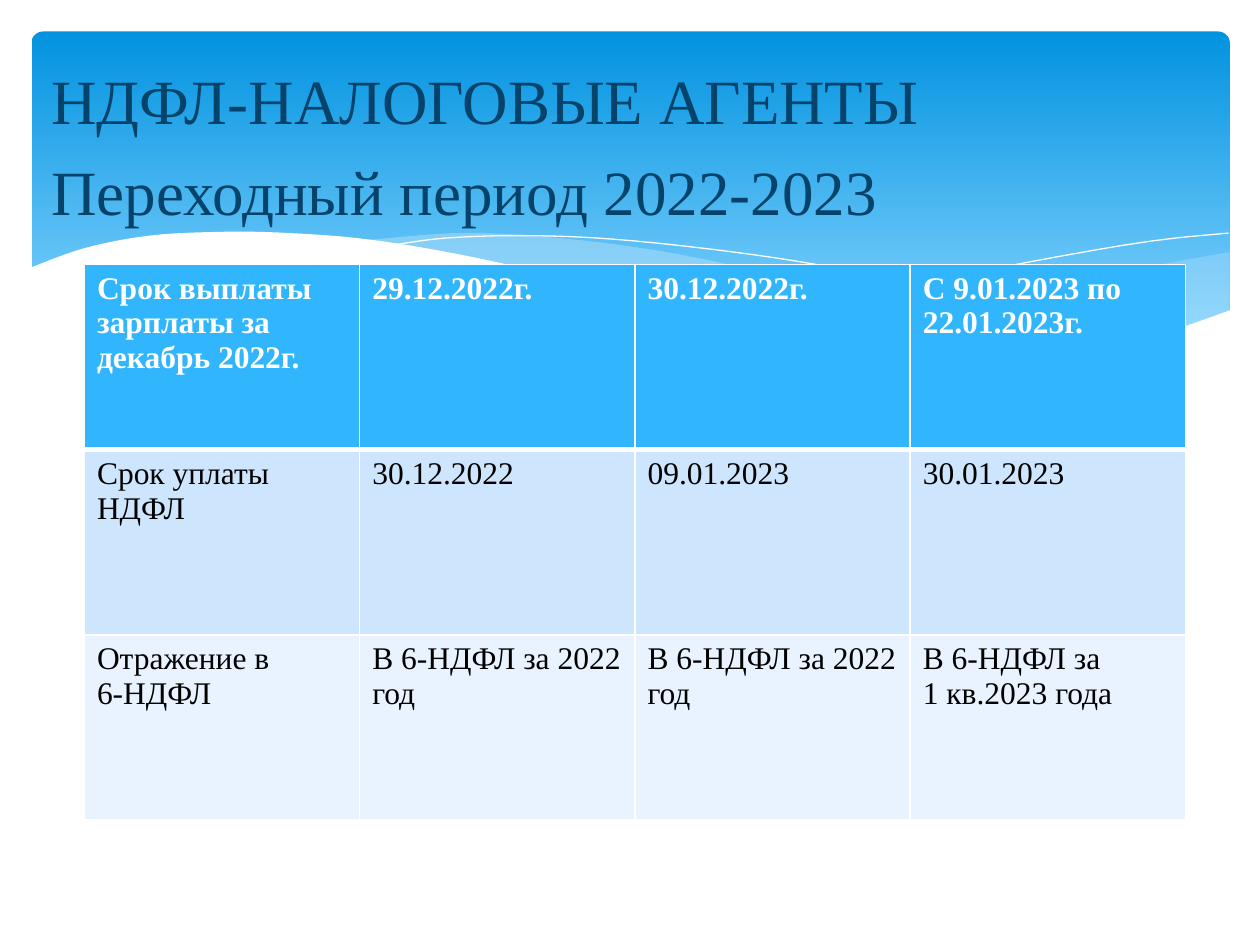
import pptx
import pptx.dml.color
import pptx.enum.shapes
import pptx.oxml
import pptx.oxml.ns
import pptx.util

THEME = {
    "font": "Times New Roman",
    "title_size": 36, "table_size": 18,
    "title": "06436B", "body": "000000", "white": "FFFFFF",
    "band_top": "0293E0", "band_bottom": "83D3FE", "wave": "C6E7FC",
    "rows": ["31B6FD", "CEE5FE", "E8F3FF"],
}
color = pptx.dml.color.RGBColor.from_string

presentation = pptx.Presentation()
presentation.slide_width = pptx.util.Inches(10)
presentation.slide_height = pptx.util.Inches(7.5)
slide = presentation.slides.add_slide(presentation.slide_layouts[6])
# The slide is a grid of 10 columns by 7.5 rows
COLUMN = presentation.slide_width / 10
ROW = presentation.slide_height / 7.5


def write_text(frame, text, size, ink, bold=False, space_before=0):
    """Write each line of the text as a paragraph."""
    frame.word_wrap = True
    for index, line in enumerate(text.split("\n")):
        paragraph = frame.add_paragraph() if index else frame.paragraphs[0]
        paragraph.space_before = pptx.util.Pt(space_before)
        run = paragraph.add_run()
        run.text = line
        run.font.name = THEME["font"]
        run.font.size = pptx.util.Pt(size)
        run.font.bold = bold
        run.font.color.rgb = color(ink)


def smooth(knots, steps=6):
    """Return points on a Catmull-Rom curve through the knots, in EMU."""
    padded = [knots[0], *knots, knots[-1]]
    points = []
    for a, b, c, d in zip(padded, padded[1:], padded[2:], padded[3:]):
        for t in (step / steps for step in range(steps)):
            x, y = (
                (2 * q + (r - p) * t + (2 * p - 5 * q + 4 * r - s) * t ** 2
                 + (3 * q - p - 3 * r + s) * t ** 3) / 2
                for p, q, r, s in zip(a, b, c, d))
            points.append((round(x * COLUMN), round(y * ROW)))
    return points + [(round(knots[-1][0] * COLUMN), round(knots[-1][1] * ROW))]


# Blue gradient band
band = slide.shapes.add_shape(
    pptx.enum.shapes.MSO_SHAPE.ROUNDED_RECTANGLE,
    round(0.25 * COLUMN), round(0.25 * ROW), round(9.51 * COLUMN), round(2.7 * ROW))
band.adjustments[0] = 0.034
band.shadow.inherit = False
band.line.fill.background()
band.fill.gradient()
band.fill.gradient_angle = 270
for stop, position, shade in zip(band.fill.gradient_stops, (0, 0.9),
                                 (THEME["band_top"], THEME["band_bottom"])):
    stop.position = position
    stop.color.rgb = color(shade)

# Waves: edges through knots, fill, opacity in percent (no fill means a hairline)
WAVES = [
    ([[(9.76, 2), (9.21, 2.1), (8.61, 2.23), (7.53, 2.48), (6.61, 2.65)],
      [(6.61, 2.65), (7.32, 2.74), (8.03, 2.78), (8.72, 2.74), (9.28, 2.63), (9.76, 2.47)]],
     THEME["wave"], 29),
    ([[(8.93, 2.73), (8.07, 2.6), (7.06, 2.4), (6.29, 2.22), (5.55, 2.05), (4.89, 1.94),
       (4.2, 1.87), (3.61, 1.85), (2.86, 1.91)],
      [(2.86, 1.91), (3.62, 2.03), (4.49, 2.22), (5.3, 2.4), (6.18, 2.58), (6.95, 2.7),
       (7.61, 2.77), (8.18, 2.78), (8.93, 2.73)]],
     THEME["wave"], 40),
    ([[(3.09, 1.95), (3.53, 1.89), (4.16, 1.87), (4.89, 1.9), (5.82, 2), (6.65, 2.13),
       (7.6, 2.33), (8.31, 2.51), (9.07, 2.72)]], None, 100),
    ([[(6.13, 2.57), (6.95, 2.35), (7.76, 2.16), (8.66, 1.99), (9.24, 1.9), (9.75, 1.85)]],
     None, 100),
    ([[(9.77, 2.46), (9.2, 2.65), (8.63, 2.74), (8.09, 2.77), (7.44, 2.74), (6.68, 2.65),
       (5.79, 2.5), (5.03, 2.33), (4.47, 2.2), (3.65, 2.02), (2.92, 1.9), (2.3, 1.85),
       (1.77, 1.84), (1.19, 1.87), (0.67, 1.97), (0.23, 2.13)],
      [(0.23, 3.29), (9.77, 3.29)]],
     THEME["white"], 100),
]
for edges, fill, opacity in WAVES:
    points = [point for edge in edges for point in smooth(edge)]
    builder = slide.shapes.build_freeform(*points[0])
    builder.add_line_segments(points[1:], close=fill is not None)
    wave = builder.convert_to_shape()
    wave.shadow.inherit = False
    if fill is None:
        wave.fill.background()
        wave.line.color.rgb = color(THEME["white"])
        wave.line.width = pptx.util.Pt(0)
        continue
    wave.line.fill.background()
    wave.fill.solid()
    wave.fill.fore_color.rgb = color(fill)
    if opacity < 100:
        tint = wave.fill._xPr.find(".//" + pptx.oxml.ns.qn("a:srgbClr"))
        pptx.oxml.ns.qn("a:alpha")
        tint.append(pptx.oxml.parse_xml(
            f'<a:alpha {pptx.oxml.ns.nsdecls("a")} val="{opacity * 1000}"/>'))

# Heading
heading = slide.shapes.add_textbox(
    round(0.31 * COLUMN), round(0.44 * ROW), round(9.37 * COLUMN), round(6.61 * ROW))
write_text(heading.text_frame, "НДФЛ-НАЛОГОВЫЕ АГЕНТЫ\nПереходный период 2022-2023",
           size=THEME["title_size"], ink=THEME["title"], space_before=8.6)

# Table of payment dates
CELLS = [
    ["Срок выплаты зарплаты за декабрь 2022г.", "29.12.2022г.", "30.12.2022г.",
     "С 9.01.2023 по 22.01.2023г."],
    ["Срок уплаты НДФЛ", "30.12.2022", "09.01.2023", "30.01.2023"],
    ["Отражение в\n6-НДФЛ", "В 6-НДФЛ за 2022 год", "В 6-НДФЛ за 2022 год",
     "В 6-НДФЛ за\n1 кв.2023 года"],
]
table = slide.shapes.add_table(
    len(CELLS), len(CELLS[0]), round(0.67 * COLUMN), round(2.1 * ROW),
    round(8.74 * COLUMN), round(4.41 * ROW)).table
for row_index, texts in enumerate(CELLS):
    header = row_index == 0
    for column_index, text in enumerate(texts):
        cell = table.cell(row_index, column_index)
        write_text(cell.text_frame, text, size=THEME["table_size"], bold=header,
                   ink=THEME["white"] if header else THEME["body"])
        cell.fill.solid()
        cell.fill.fore_color.rgb = color(THEME["rows"][row_index])
        # White borders, thicker between the header and the body
        thick_side = {0: "B", 1: "T"}.get(row_index)
        for position, side in enumerate("LRTB"):
            width = pptx.util.Pt(3 if side == thick_side else 1)
            cell._tc.get_or_add_tcPr().insert(position, pptx.oxml.parse_xml(
                f'<a:ln{side} {pptx.oxml.ns.nsdecls("a")} w="{width}"><a:solidFill>'
                f'<a:srgbClr val="{THEME["white"]}"/></a:solidFill></a:ln{side}>'))

presentation.save("out.pptx")
